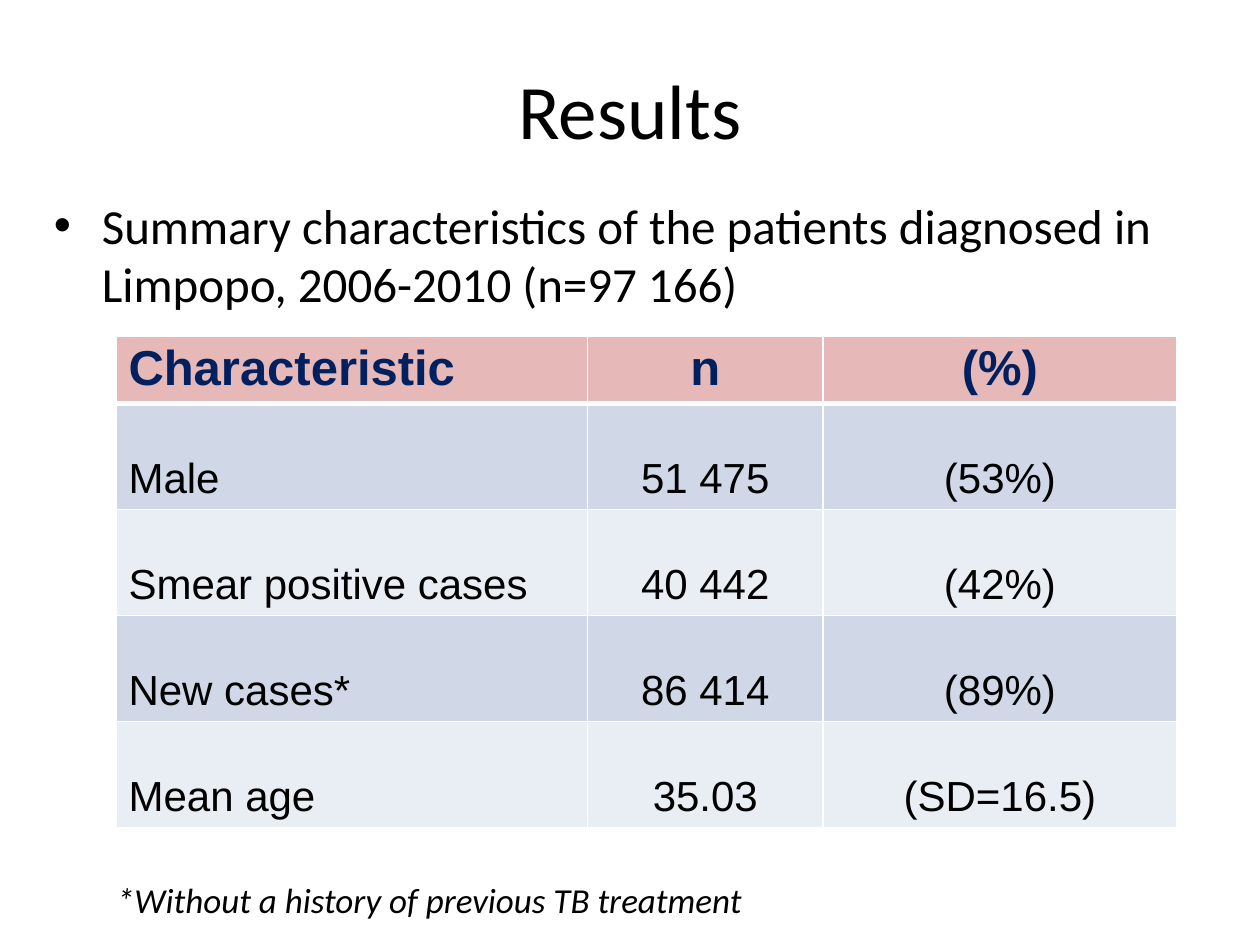
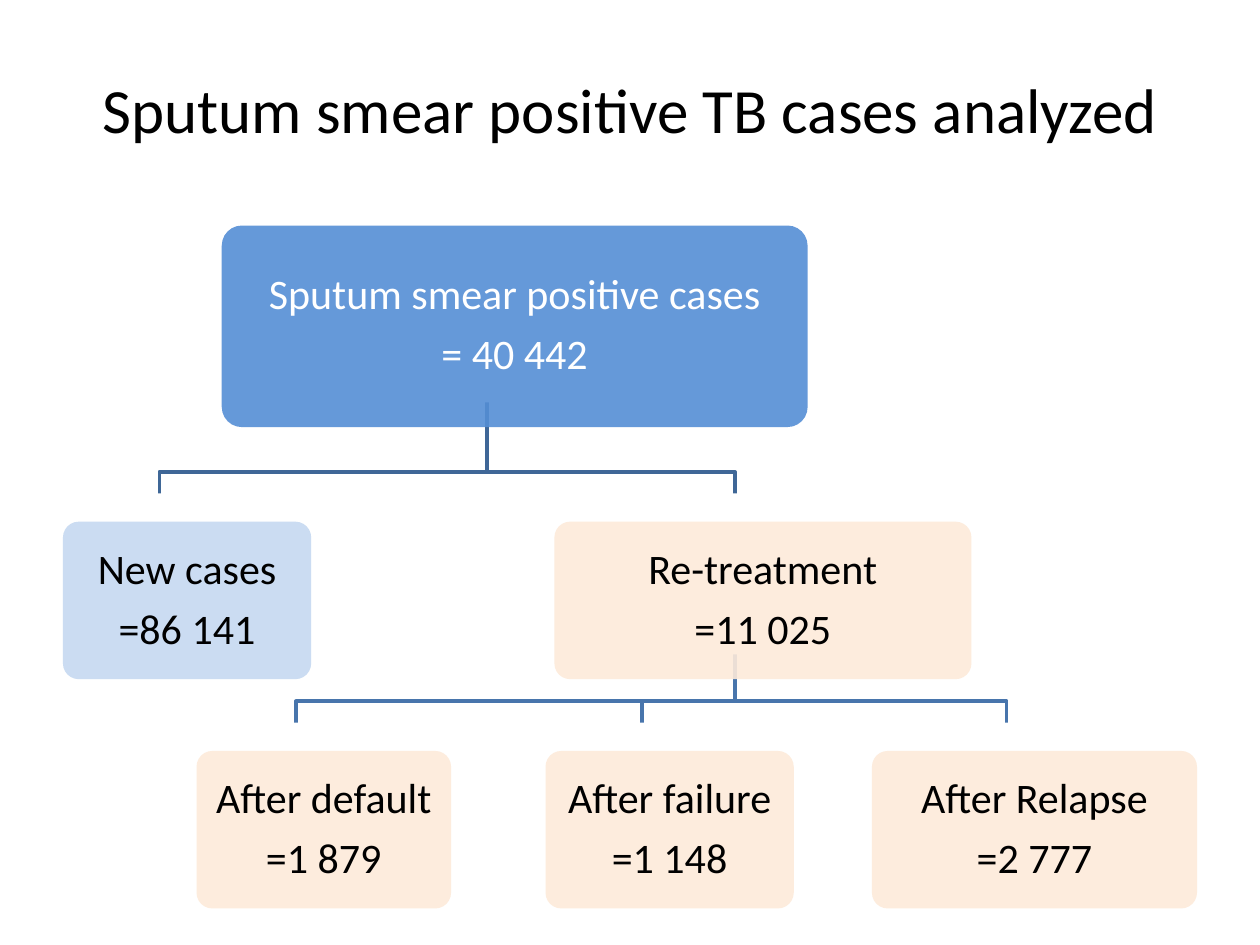
from dataclasses import dataclass

import pptx
import pptx.dml.color
import pptx.enum.shapes
import pptx.enum.text
import pptx.oxml
import pptx.oxml.ns
import pptx.util
from lxml import etree

ALIGN = pptx.enum.text.PP_ALIGN
ANCHOR = pptx.enum.text.MSO_ANCHOR
ROUNDED = pptx.enum.shapes.MSO_SHAPE.ROUNDED_RECTANGLE
COLUMNS, ROWS = 100, 75  # slide grid
SLIDE_WIDTH = pptx.util.Inches(10)
SLIDE_HEIGHT = pptx.util.Inches(7.5)
UNIT = SLIDE_WIDTH // COLUMNS


@dataclass(frozen=True)
class Theme:
    font: str = "Calibri"
    table_font: str = "Arial"
    black: str = "000000"
    white: str = "FFFFFF"
    header_text: str = "002060"
    header_fill: str = "E6B9B8"
    bands: tuple = ("D0D8E8", "E9EDF4")
    root: str = "558ED5"
    new: str = "C6D9F1"
    retreated: str = "FDEADA"
    upper_link: str = "3F6797"
    lower_link: str = "4875AC"
    title_size: int = 44
    small_title_size: int = 36
    heading_size: int = 28
    body_size: int = 24
    note_size: int = 20


THEME = Theme()


@dataclass(frozen=True)
class Box:
    """A rectangle in grid columns and rows."""
    left: float
    top: float
    width: float
    height: float

    def inner(self, left, top, width, height):
        return Box(self.left + left, self.top + top, width, height)

    @property
    def center(self):
        return self.left + self.width / 2

    @property
    def bottom(self):
        return self.top + self.height

    @property
    def emu(self):
        return [grid(value) for value in (self.left, self.top, self.width, self.height)]


@dataclass(frozen=True)
class Card:
    text: str
    level: int
    left: float
    width: float
    fill: str
    color: str = THEME.black
    parent: int | None = None


TITLE_BOX = Box(5, 3, 90, 11.2)
CARD_OFFSET = (2.2, 2.1)
LEVEL_TOPS = (0, 23.5, 41.7)
LEVEL_HEIGHTS = (16, 12.5, 12.5)
LINK_COLORS = (THEME.upper_link, THEME.lower_link)
BUS_GAP = 1.85

CARDS = [
    Card("Sputum smear positive cases\n= 40 442", 0, 12.6, 46.5, THEME.root, THEME.white),
    Card("New cases\n=86 141", 1, 0, 19.7, THEME.new, parent=0),
    Card("Re-treatment\n=11 025", 1, 39, 33.1, THEME.retreated, parent=0),
    Card("After default\n=1 879", 2, 10.6, 20.2, THEME.retreated, parent=2),
    Card("After failure\n=1 148", 2, 38.3, 19.7, THEME.retreated, parent=2),
    Card("After Relapse\n=2 777", 2, 64.2, 25.8, THEME.retreated, parent=2),
]

PATIENT_ROWS = [
    ("Characteristic", "n", "(%)"),
    ("Male", "51 475", "(53%)"),
    ("Smear positive cases", "40 442", "(42%)"),
    ("New cases*", "86 414", "(89%)"),
    ("Mean age", "35.03", "(SD=16.5)"),
]


def grid(value):
    return pptx.util.Emu(round(value * UNIT))


def rgb(color):
    return pptx.dml.color.RGBColor.from_string(color)


def write_text(frame, text, size=THEME.body_size, color=THEME.black, font=THEME.font,
               bold=False, italic=False, align=ALIGN.LEFT, anchor=ANCHOR.TOP,
               line_spacing=None, before=0, after=0, hanging=0, bullet=None):
    """Write one paragraph per line of text; before and after are shares of its size."""
    frame.word_wrap = True
    frame.vertical_anchor = anchor
    for index, line in enumerate(text.split("\n")):
        paragraph = frame.add_paragraph() if index else frame.paragraphs[0]
        paragraph.alignment = align
        paragraph.line_spacing = line_spacing
        paragraph.space_before = pptx.util.Pt(size * before)
        paragraph.space_after = pptx.util.Pt(size * after)
        run = paragraph.add_run()
        run.text = line
        run.font.name, run.font.size = font, pptx.util.Pt(size)
        run.font.bold, run.font.italic = bold, italic
        run.font.color.rgb = rgb(color)
        properties = paragraph._p.get_or_add_pPr()
        if hanging:
            properties.set("marL", str(grid(hanging)))
            properties.set("indent", str(-grid(hanging)))
        if bullet:
            etree.SubElement(properties, pptx.oxml.ns.qn("a:buFont"), typeface="Arial")
            etree.SubElement(properties, pptx.oxml.ns.qn("a:buChar"), char=bullet)


def add_titled_slide(presentation, text, size):
    slide = presentation.slides.add_slide(presentation.slide_layouts[5])
    title = slide.shapes.title
    title.left, title.top, title.width, title.height = TITLE_BOX.emu
    write_text(title.text_frame, text, size=size, align=ALIGN.CENTER, anchor=ANCHOR.MIDDLE)
    return slide


def add_text_box(slide, box, text, **text_format):
    write_text(slide.shapes.add_textbox(*box.emu).text_frame, text, **text_format)


# Patient table
def set_borders(cell, bottom):
    properties = cell._tc.get_or_add_tcPr()
    for position, (side, points) in enumerate(
            [("lnL", 1), ("lnR", 1), ("lnT", 1), ("lnB", bottom)]):
        line = pptx.oxml.parse_xml(
            f'<a:{side} {pptx.oxml.ns.nsdecls("a")} w="{pptx.util.Pt(points)}"><a:solidFill>'
            f'<a:srgbClr val="{THEME.white}"/></a:solidFill></a:{side}>')
        properties.insert(position, line)


def add_patient_table(slide, box):
    column_shares = (4 / 9, 2 / 9, 3 / 9)
    header_height = 5.3
    row_height = (box.height - header_height) / (len(PATIENT_ROWS) - 1)
    table = slide.shapes.add_table(len(PATIENT_ROWS), len(column_shares), *box.emu).table
    table.first_row = table.horz_banding = False
    for column, share in zip(table.columns, column_shares):
        column.width = grid(box.width * share)
    for row, values in enumerate(PATIENT_ROWS):
        header = row == 0
        table.rows[row].height = grid(header_height if header else row_height)
        for column, value in enumerate(values):
            cell = table.cell(row, column)
            cell.margin_top = cell.margin_bottom = grid(0.4)
            cell.fill.solid()
            cell.fill.fore_color.rgb = rgb(
                THEME.header_fill if header else THEME.bands[(row - 1) % 2])
            set_borders(cell, bottom=3 if header else 1)
            write_text(cell.text_frame, value, font=THEME.table_font, bold=header,
                       size=THEME.heading_size if header else THEME.body_size,
                       color=THEME.header_text if header else THEME.black,
                       align=ALIGN.CENTER if column else ALIGN.LEFT,
                       line_spacing=None if header else 2.0)


# Case tree
def add_link(slide, parent, child, color):
    bus = child.top - BUS_GAP
    points = [(parent.center, parent.bottom), (parent.center, bus),
              (child.center, bus), (child.center, child.top)]
    start, *rest = [(grid(x), grid(y)) for x, y in points]
    builder = slide.shapes.build_freeform(*start)
    builder.add_line_segments(rest, close=False)
    link = builder.convert_to_shape()
    link.shadow.inherit = False
    link.fill.background()
    link.line.color.rgb = rgb(color)
    link.line.width = pptx.util.Pt(2)


def add_rounded(slide, box):
    shape = slide.shapes.add_shape(ROUNDED, *box.emu)
    shape.adjustments[0] = 0.1
    shape.shadow.inherit = False
    return shape


def add_card(slide, box, card):
    # White outline behind the offset card
    outline = add_rounded(slide, box)
    outline.fill.background()
    outline.line.color.rgb = rgb(THEME.white)
    outline.line.width = pptx.util.Pt(2)

    face = add_rounded(slide, box.inner(*CARD_OFFSET, box.width, box.height))
    face.line.fill.background()
    face.fill.solid()
    face.fill.fore_color.rgb = rgb(card.fill)
    color = face._element.spPr.find(".//" + pptx.oxml.ns.qn("a:srgbClr"))
    etree.SubElement(color, pptx.oxml.ns.qn("a:alpha"), val="90000")
    frame = face.text_frame
    frame.margin_left = frame.margin_right = grid(1)
    frame.margin_top = frame.margin_bottom = grid(1)
    write_text(frame, card.text, color=card.color, align=ALIGN.CENTER,
               anchor=ANCHOR.MIDDLE, line_spacing=0.9, after=0.35)


def add_case_tree(slide, box):
    boxes = [box.inner(card.left, LEVEL_TOPS[card.level], card.width,
                       LEVEL_HEIGHTS[card.level]) for card in CARDS]
    for card, card_box in reversed(list(zip(CARDS, boxes))):
        if card.parent is not None:
            add_link(slide, boxes[card.parent], card_box, LINK_COLORS[card.level - 1])
    for card, card_box in zip(CARDS, boxes):
        add_card(slide, card_box, card)


# Slides
def build_results_slide(presentation):
    slide = add_titled_slide(presentation, "Results", THEME.title_size)
    add_patient_table(slide, Box(9.2, 26.7, 84.2, 39))
    add_text_box(slide, Box(3.3, 15, 90, 11.7),
                 "Summary characteristics of the patients diagnosed in Limpopo, "
                 "2006-2010 (n=97 166)",
                 size=THEME.heading_size, before=0.2, hanging=3.8, bullet="•")
    add_text_box(slide, Box(8.3, 69.2, 90, 4.2),
                 "*Without a history of previous TB treatment",
                 size=THEME.note_size, italic=True, before=0.2, hanging=3.8)


def build_cases_slide(presentation):
    slide = add_titled_slide(presentation, "Sputum smear positive TB cases analyzed",
                             THEME.small_title_size)
    add_case_tree(slide, Box(2.8, 15.8, 92.2, 56.3))


def main():
    presentation = pptx.Presentation()
    presentation.slide_width = SLIDE_WIDTH
    presentation.slide_height = SLIDE_HEIGHT
    build_results_slide(presentation)
    build_cases_slide(presentation)
    presentation.save("out.pptx")


if __name__ == "__main__":
    main()
